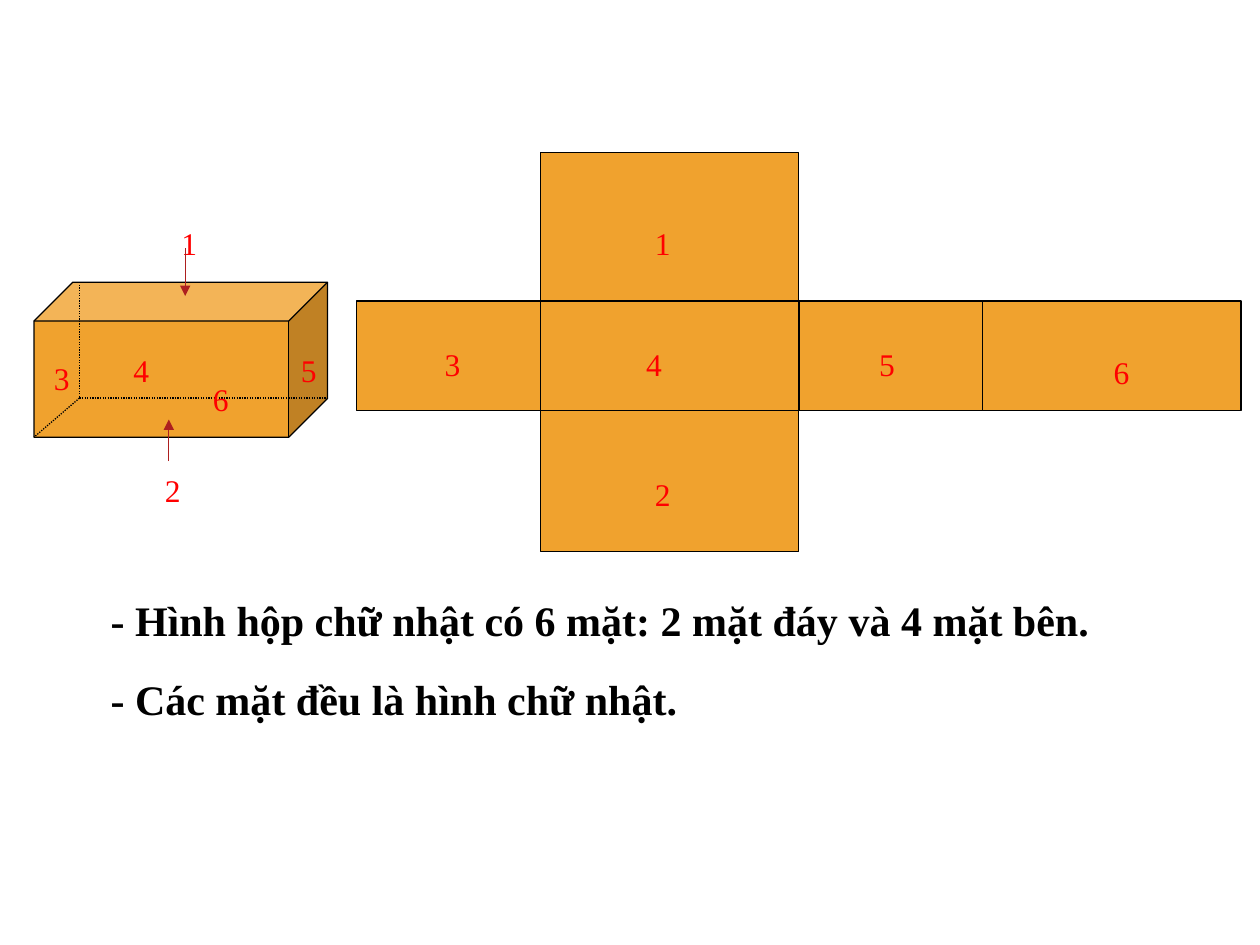
"""Build a slide that unfolds a rectangular box into its net."""
from dataclasses import dataclass
from itertools import accumulate

from lxml import etree
from pptx import Presentation
from pptx.dml.color import RGBColor
from pptx.enum.dml import MSO_LINE
from pptx.enum.shapes import MSO_CONNECTOR, MSO_SHAPE
from pptx.enum.text import MSO_AUTO_SIZE
from pptx.oxml.ns import qn
from pptx.util import Inches, Pt

RECT, CUBE = MSO_SHAPE.RECTANGLE, MSO_SHAPE.CUBE
STRAIGHT = MSO_CONNECTOR.STRAIGHT
DOTS = MSO_LINE.ROUND_DOT
GROW = MSO_AUTO_SIZE.SHAPE_TO_FIT_TEXT


@dataclass(frozen=True)
class Theme:
    """Hold the colours, font and sizes."""
    face: RGBColor = RGBColor(0xF0, 0xA2, 0x2E)
    ink: RGBColor = RGBColor(0, 0, 0)
    mark: RGBColor = RGBColor(0xFF, 0, 0)
    arrow: RGBColor = RGBColor(0xAD, 0x1F, 0x1F)
    font: str = "Times New Roman"
    label: Pt = Pt(18)
    body: Pt = Pt(24)
    line: Pt = Pt(0.75)


THEME = Theme()


def add_text(shapes, text, box, size, color, bold=False):
    """Add one line of text in a box."""
    frame = shapes.add_textbox(*map(Inches, box)).text_frame
    frame.word_wrap = True
    frame.auto_size = GROW
    frame.text = text
    font = frame.paragraphs[0].runs[0].font
    font.name, font.size, font.bold = THEME.font, size, bold
    font.color.rgb = color


def add_label(shapes, text, left, top, width):
    """Add the number of a face."""
    add_text(shapes, text, (left, top, width, 0.4), THEME.label, THEME.mark)


def add_solid(shapes, kind, box):
    """Add a filled and outlined shape."""
    shape = shapes.add_shape(kind, *map(Inches, box))
    shape.shadow.inherit = False
    shape.fill.solid()
    shape.fill.fore_color.rgb = THEME.face
    shape.line.color.rgb = THEME.ink
    shape.line.width = THEME.line
    return shape


def add_line(shapes, ends, color):
    """Add a plain straight line."""
    line = shapes.add_connector(STRAIGHT, *map(Inches, ends))
    line.line.color.rgb = color
    line.line.width = THEME.line
    etree.SubElement(line._element.spPr, qn("a:effectLst"))
    return line


def add_arrow(shapes, ends):
    """Add a line with a head at its end."""
    line = add_line(shapes, ends, THEME.arrow)
    etree.SubElement(line.line._get_or_add_ln(), qn("a:tailEnd"), type="triangle")


def draw_net(slide, box):
    """Draw the six unfolded faces in the box."""
    left, top, width, height = box
    shapes = slide.shapes.add_group_shape().shapes
    side, front = 0.208 * width, 0.292 * width
    wide = [side, front, side, front]
    high = [0.372 * height, 0.275 * height, 0.353 * height]
    cols = list(accumulate(wide, initial=left))
    rows = list(accumulate(high, initial=top))
    faces = [
        ("3", 0, 1, 0.6, 0.3), ("4", 1, 1, 0.74, 0.3),
        ("5", 2, 1, 0.54, 0.3), ("6", 3, 1, 0.94, 0.36),
        ("1", 1, 0, 0.81, 0.52), ("2", 1, 2, 0.81, 0.46),
    ]
    for text, col, row, dx, dy in faces:
        add_solid(shapes, RECT, (cols[col], rows[row], wide[col], high[row]))
        add_label(shapes, text, cols[col] + dx, rows[row] + dy, 0.4)


def draw_cube(slide, box):
    """Draw the closed box with hidden edges and numbers."""
    left, top, width, height = box
    shapes = slide.shapes.add_group_shape().shapes
    cube = add_solid(shapes, CUBE, box)
    cube.adjustments[0] = 0.25
    back, base = left + 0.36, top + 0.92
    edges = [
        (back, top, back, base),
        (back, base, left + width, base),
        (back, base, left, top + height),
    ]
    for ends in edges:
        add_line(shapes, ends, THEME.ink).line.dash_style = DOTS
    marks = [
        ("3", 0.06, 0.56), ("6", 1.32, 0.73), ("4", 0.69, 0.5),
        ("5", 2.02, 0.5), ("1", 1.07, -0.51), ("2", 0.94, 1.45),
    ]
    for text, dx, dy in marks:
        add_label(shapes, text, left + dx, top + dy, 0.32)
    for dx, start, end in [(1.07, 1.42, 1.09), (1.2, -0.27, 0.11)]:
        add_arrow(shapes, (left + dx, top + start, left + dx, top + end))


def draw_notes(slide, box):
    """Write the two statements below the drawings."""
    left, top, width, height = box
    lines = [
        "- Hình hộp chữ nhật có 6 mặt: 2 mặt đáy và 4 mặt bên.",
        "- Các mặt đều là hình chữ nhật.",
    ]
    step = height - 0.5
    for i, text in enumerate(lines):
        spot = (left, top + i * step, width, 0.5)
        add_text(slide.shapes, text, spot, THEME.body, THEME.ink, True)


def main():
    """Build and save the slide."""
    deck = Presentation()
    deck.slide_width, deck.slide_height = Inches(10), Inches(7.5)
    slide = deck.slides.add_slide(deck.slide_layouts[6])
    draw_net(slide, (2.83, 1.21, 7.02, 3.17))
    draw_notes(slide, (0.78, 4.67, 8.5, 1.13))
    draw_cube(slide, (0.27, 2.24, 2.33, 1.23))
    deck.save("out.pptx")


if __name__ == "__main__":
    main()
